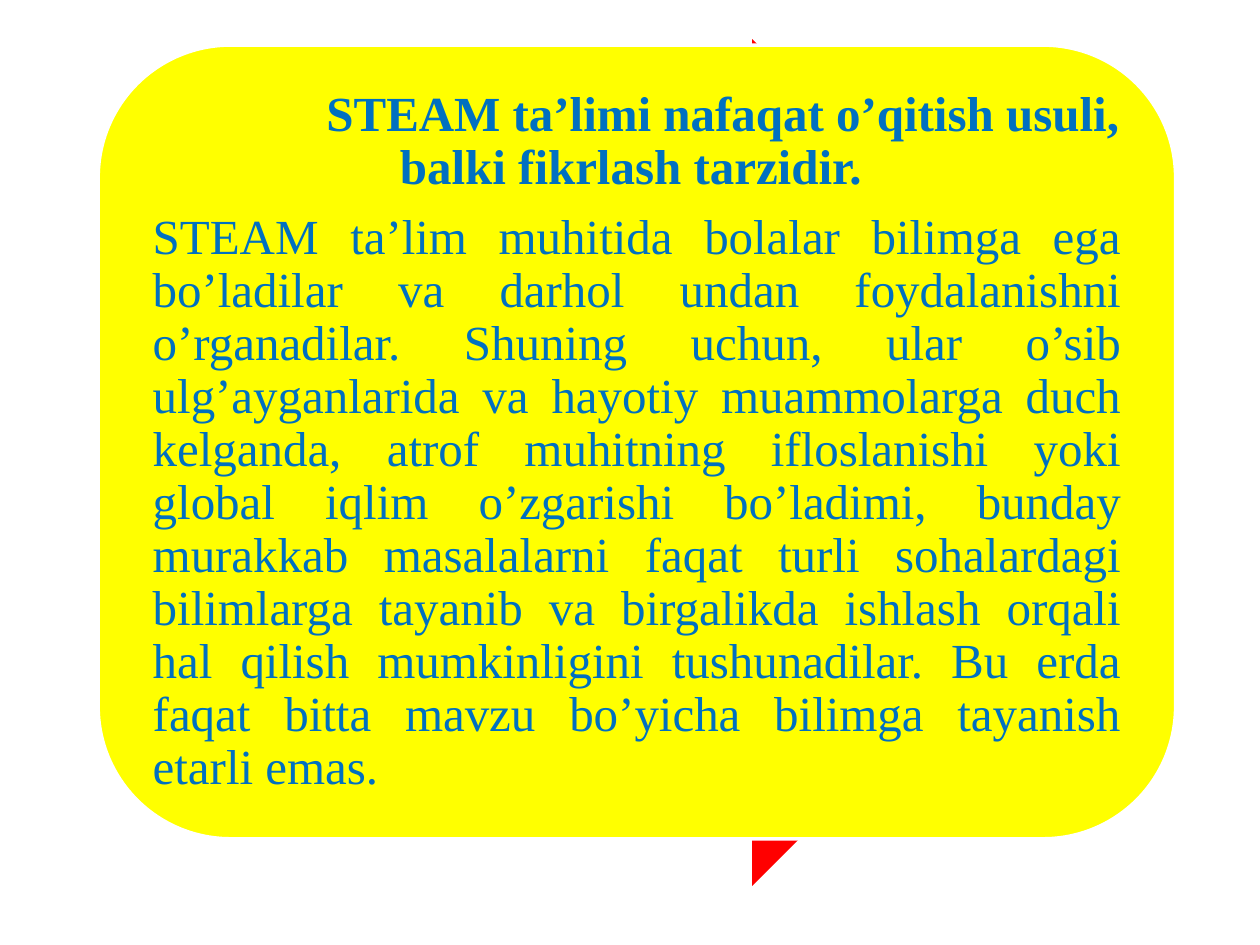
import dataclasses

import pptx
import pptx.dml.color
import pptx.enum.shapes
import pptx.enum.text
import pptx.util

Cm = pptx.util.Cm
Pt = pptx.util.Pt
ALIGN = pptx.enum.text.PP_ALIGN
SHAPE = pptx.enum.shapes.MSO_SHAPE

HEADING = "STEAM ta’limi nafaqat o’qitish usuli, balki fikrlash tarzidir. "
BODY = (
    "STEAM ta’lim muhitida bolalar bilimga ega bo’ladilar va darhol undan "
    "foydalanishni o’rganadilar. Shuning uchun, ular o’sib ulg’ayganlarida va "
    "hayotiy muammolarga duch kelganda, atrof muhitning ifloslanishi yoki global "
    "iqlim o’zgarishi bo’ladimi, bunday murakkab masalalarni faqat turli "
    "sohalardagi bilimlarga tayanib va birgalikda ishlash orqali hal qilish "
    "mumkinligini tushunadilar. Bu erda faqat bitta mavzu bo’yicha bilimga "
    "tayanish etarli emas."
)


@dataclasses.dataclass(frozen=True)
class Theme:
    font: str = "Times New Roman"
    text_size: float = 28
    text: str = "0070C0"
    arrow: str = "FF0000"
    panel: str = "FFFF00"
    outline: str = "FFFFFF"
    outline_width: float = 2
    line_spacing: float = 0.9
    space_after: float = 9.8
    tab_size: float = 98
    inset: float = 0.32


def rgb(value):
    return pptx.dml.color.RGBColor.from_string(value)


def add_text(para, text, *, font, size, color, bold=False):
    span = para.add_run()
    span.text = text
    span.font.name = font
    span.font.size = Pt(size)
    span.font.bold = bold
    span.font.color.rgb = rgb(color)


class SlideBuilder:
    """Draws elements into one group on the slide; lengths are centimetres."""

    def __init__(self, slide, theme):
        self.theme = theme
        self.group = slide.shapes.add_group_shape()

    def shape(self, kind, left, top, width, height, fill, outline=None):
        shape = self.group.shapes.add_shape(
            kind, Cm(left), Cm(top), Cm(width), Cm(height)
        )
        shape.shadow.inherit = False
        shape.fill.solid()
        shape.fill.fore_color.rgb = rgb(fill)
        if outline:
            shape.line.color.rgb = rgb(outline)
            shape.line.width = Pt(self.theme.outline_width)
        else:
            shape.line.fill.background()

    def text_box(self, left, top, width, height, paragraphs):
        """Add paragraphs given as (text, alignment, bold)."""
        theme = self.theme
        box = self.group.shapes.add_textbox(Cm(left), Cm(top), Cm(width), Cm(height))
        frame = box.text_frame
        frame.word_wrap = True
        frame.vertical_anchor = pptx.enum.text.MSO_ANCHOR.MIDDLE
        frame.margin_left = frame.margin_right = Cm(theme.inset)
        frame.margin_top = frame.margin_bottom = Cm(theme.inset)
        for index, (text, alignment, bold) in enumerate(paragraphs):
            para = frame.add_paragraph() if index else frame.paragraphs[0]
            para.alignment = alignment
            para.line_spacing = theme.line_spacing
            para.space_after = Pt(theme.space_after)
            para._p.get_or_add_pPr().set("defTabSz", str(int(Pt(theme.tab_size))))
            add_text(para, text, font=theme.font, size=theme.text_size,
                     color=theme.text, bold=bold)


def main():
    deck = pptx.Presentation()
    deck.slide_width, deck.slide_height = Cm(25.4), Cm(19.05)
    blank_layout = deck.slide_layouts[6]
    theme = Theme()
    page = SlideBuilder(deck.slides.add_slide(blank_layout), theme)

    left, width = 1.98, 21.72
    panel_top, panel_height = 0.91, 16
    text_gap = 0.78
    page.shape(SHAPE.RIGHT_ARROW, left, 0.79, width, 17.07, theme.arrow)
    page.shape(SHAPE.ROUNDED_RECTANGLE, left, panel_top, width, panel_height,
               theme.panel, theme.outline)
    page.text_box(
        left + text_gap, panel_top + text_gap,
        width - 2 * text_gap, panel_height - 2 * text_gap,
        [("\t" + HEADING, ALIGN.CENTER, True), (BODY, ALIGN.JUSTIFY, False)],
    )
    deck.save("out.pptx")


if __name__ == "__main__":
    main()
